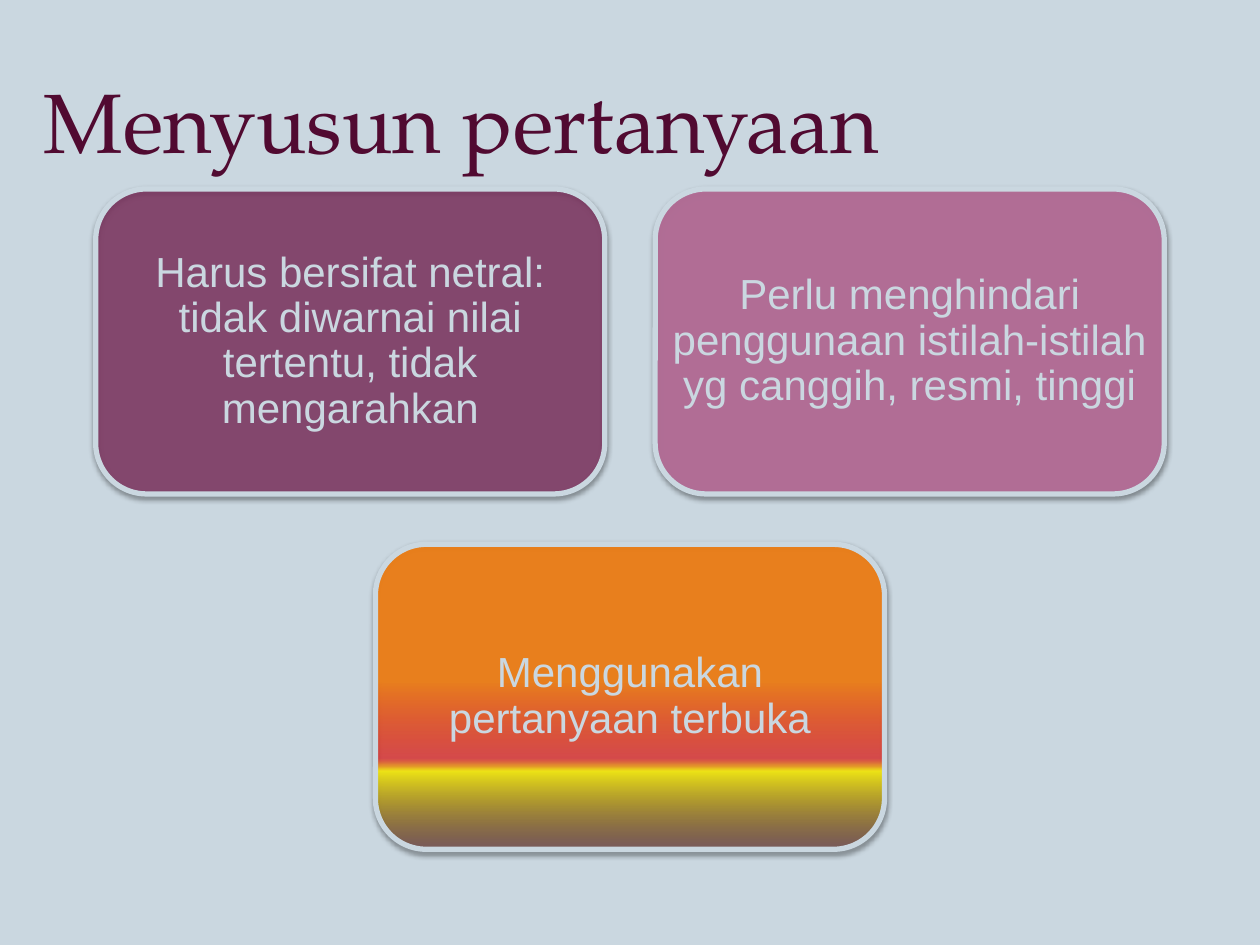
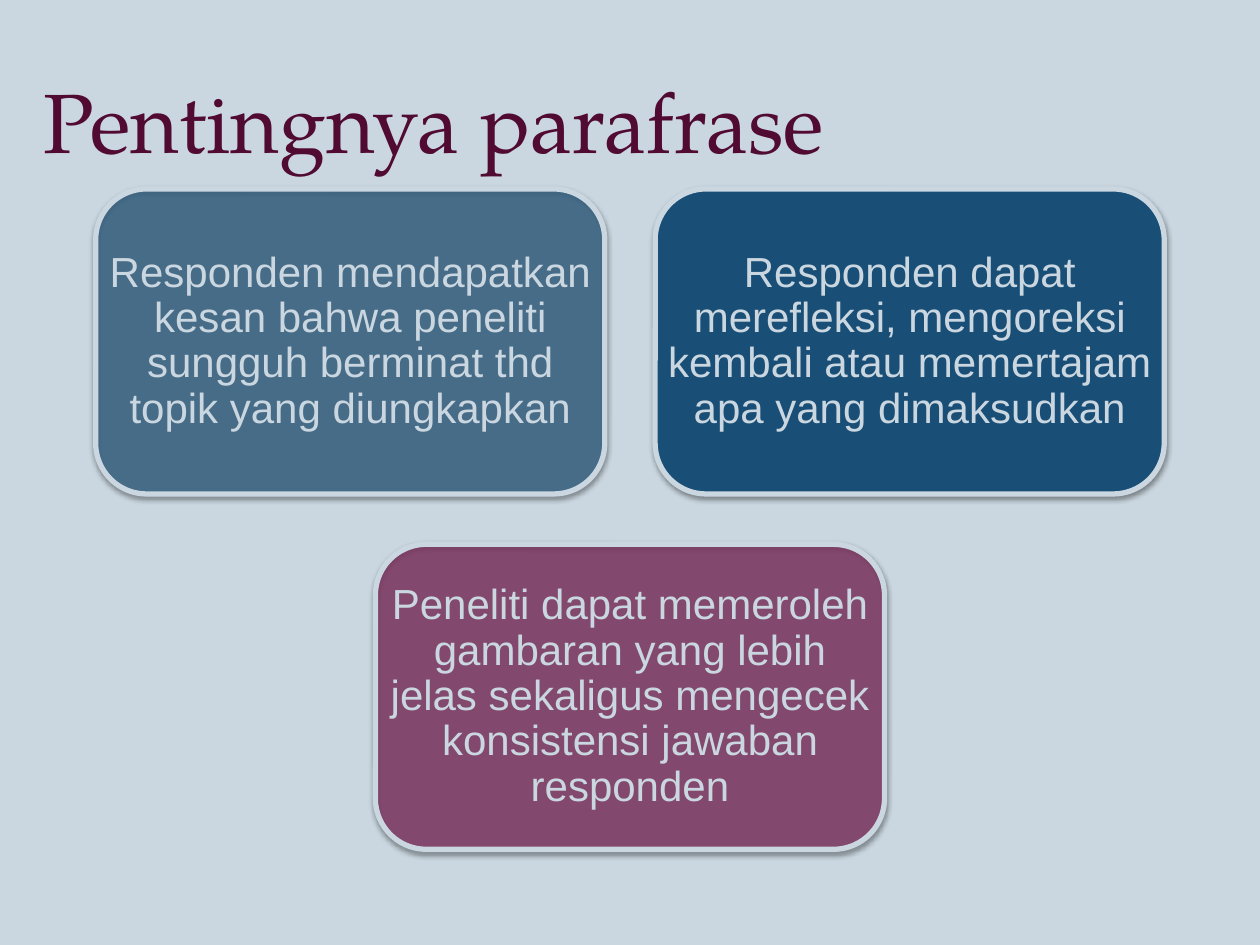
from typing import NamedTuple

from lxml.etree import SubElement
from pptx import Presentation
from pptx.dml.color import RGBColor
from pptx.enum.shapes import MSO_SHAPE as Preset
from pptx.enum.text import MSO_ANCHOR as Anchor, PP_ALIGN as Align
from pptx.oxml.ns import qn
from pptx.slide import Slide
from pptx.util import Inches, Pt

SLIDE_WIDTH, SLIDE_HEIGHT = 10, 7.5
CARD_WIDTH, CARD_HEIGHT = 4.04, 2.42
GAP = 0.4
GRID_LEFT = (SLIDE_WIDTH - 2 * CARD_WIDTH - GAP) / 2
GRID_TOP = SLIDE_HEIGHT * 0.2

MIST, WINE, PLUM, ORCHID, NAVY = "CAD7E0", "510A31", "760F48", "B96795", "194E76"
BODY_FONT, TITLE_FONT = "Arial", "TeX Gyre Pagella"


class Box(NamedTuple):
    left: float
    top: float
    width: float
    height: float


class Tint(NamedTuple):
    color: str
    opacity: int = 100
    position: int = 0


class Card(NamedTuple):
    message: str
    tints: list[Tint]


class Topic(NamedTuple):
    title: str
    cards: list[Card]


class Style(NamedTuple):
    font: str
    size: int
    color: str
    align: Align
    spacing: float
    margin: float


TITLE_BOX = Box(0.25, 0.33, 9.5, 1.25)
TITLE_STYLE = Style(TITLE_FONT, 48, WINE, Align.LEFT, 1.0, 0.1)
CARD_STYLE = Style(BODY_FONT, 24, MIST, Align.CENTER, 0.9, 0.1)
CARD_CELLS = [(0, 0), (1, 0), (0.5, 1)]
SUNSET = [
    Tint("FF7A00", 80, 45),
    Tint("FF0300", 56, 70),
    Tint("FFF200", 85, 74),
    Tint("4D0808", 50, 100),
]

TOPICS = [
    Topic("Menyusun pertanyaan", [
        Card("Harus bersifat netral: tidak diwarnai nilai tertentu, tidak mengarahkan",
             [Tint(PLUM, 62)]),
        Card("Perlu menghindari penggunaan istilah-istilah yg canggih, resmi, tinggi",
             [Tint(ORCHID, 84)]),
        Card("Menggunakan pertanyaan terbuka", SUNSET),
    ]),
    Topic("Pentingnya parafrase", [
        Card("Responden mendapatkan kesan bahwa peneliti sungguh berminat thd "
             "topik yang diungkapkan", [Tint(NAVY, 63)]),
        Card("Responden dapat merefleksi, mengoreksi kembali atau memertajam "
             "apa yang dimaksudkan", [Tint(NAVY)]),
        Card("Peneliti dapat memeroleh gambaran yang lebih jelas sekaligus mengecek "
             "konsistensi jawaban responden", [Tint(PLUM, 61)]),
    ]),
]


def rgb(color: str) -> RGBColor:
    return RGBColor.from_string(color)


def grid_box(column: float, row: float) -> Box:
    return Box(GRID_LEFT + column * (CARD_WIDTH + GAP),
               GRID_TOP + row * (CARD_HEIGHT + GAP), CARD_WIDTH, CARD_HEIGHT)


def add_tint(parent, tint: Tint) -> None:
    color = SubElement(parent, qn("a:srgbClr"), val=tint.color)
    if tint.opacity < 100:
        SubElement(color, qn("a:alpha"), val=str(tint.opacity * 1000))


def fill_panel(panel, tints: list[Tint]) -> None:
    properties = panel._element.spPr
    if len(tints) == 1:
        panel.fill.solid()
        panel.fill.fore_color.rgb = rgb(tints[0].color)
        solid = properties.find(qn("a:solidFill"))
        solid.clear()
        add_tint(solid, tints[0])
        return
    panel.fill.gradient()
    panel.fill.gradient_angle = 270
    stops = properties.find(qn("a:gradFill")).find(qn("a:gsLst"))
    stops.clear()
    for tint in tints:
        add_tint(SubElement(stops, qn("a:gs"), pos=str(tint.position * 1000)), tint)


def add_shadow(panel) -> None:
    panel.shadow.inherit = False
    effects = panel._element.spPr.find(qn("a:effectLst"))
    shadow = SubElement(effects, qn("a:outerShdw"), blurRad=str(Pt(3.1)),
                        dist=str(Pt(1.6)), dir="5400000", rotWithShape="0")
    add_tint(shadow, Tint("000000", 38))


def add_text(slide: Slide, box: Box, text: str, style: Style) -> None:
    frame = slide.shapes.add_textbox(*map(Inches, box)).text_frame
    frame.word_wrap = True
    frame.vertical_anchor = Anchor.MIDDLE
    frame.margin_left = frame.margin_right = Inches(style.margin)
    frame.margin_top = frame.margin_bottom = Inches(style.margin)
    frame.text = text
    paragraph = frame.paragraphs[0]
    paragraph.alignment = style.align
    paragraph.line_spacing = style.spacing
    font = paragraph.runs[0].font
    font.name, font.size = style.font, Pt(style.size)
    font.color.rgb = rgb(style.color)


def add_card(slide: Slide, box: Box, card: Card) -> None:
    panel = slide.shapes.add_shape(Preset.ROUNDED_RECTANGLE, *map(Inches, box))
    fill_panel(panel, card.tints)
    panel.line.color.rgb = rgb(MIST)
    panel.line.width = Pt(3)
    add_shadow(panel)
    add_text(slide, box, card.message, CARD_STYLE)


def add_topic(deck, topic: Topic) -> None:
    slide = deck.slides.add_slide(deck.slide_layouts[6])
    slide.background.fill.solid()
    slide.background.fill.fore_color.rgb = rgb(MIST)
    for cell, card in zip(CARD_CELLS, topic.cards):
        add_card(slide, grid_box(*cell), card)
    add_text(slide, TITLE_BOX, topic.title, TITLE_STYLE)


def main() -> None:
    deck = Presentation()
    deck.slide_width, deck.slide_height = Inches(SLIDE_WIDTH), Inches(SLIDE_HEIGHT)
    for topic in TOPICS:
        add_topic(deck, topic)
    deck.save("out.pptx")


if __name__ == "__main__":
    main()
